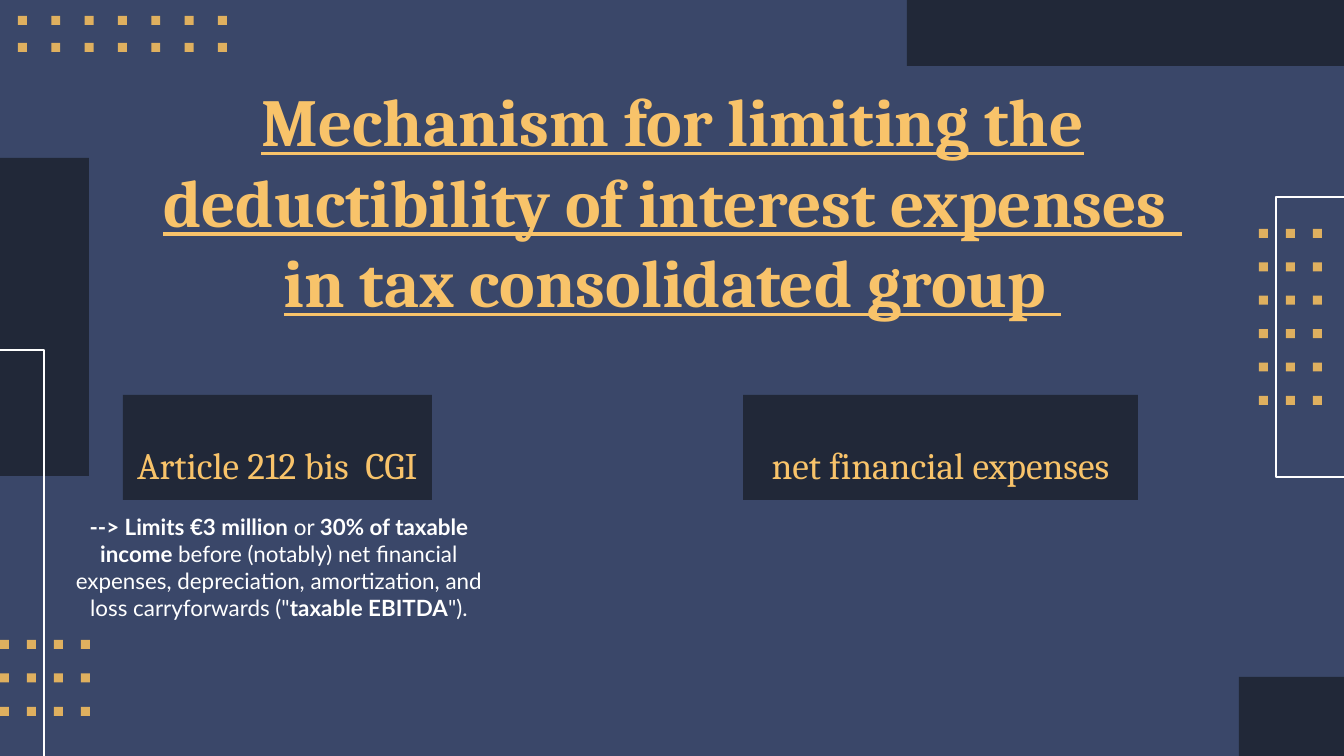
from copy import deepcopy
from dataclasses import dataclass

from pptx import Presentation
from pptx.dml.color import RGBColor
from pptx.enum.shapes import MSO_SHAPE
from pptx.enum.text import MSO_ANCHOR, MSO_AUTO_SIZE, PP_ALIGN
from pptx.oxml.ns import qn
from pptx.util import Inches, Pt

RECTANGLE = MSO_SHAPE.RECTANGLE
TOP, BOTTOM = MSO_ANCHOR.TOP, MSO_ANCHOR.BOTTOM
CENTER = PP_ALIGN.CENTER
NO_AUTOFIT = MSO_AUTO_SIZE.NONE

SLIDE_WIDTH, SLIDE_HEIGHT = 1344, 756
SCALE = Inches(10) / SLIDE_WIDTH
TITLE_ONLY = 5
DOT = 9


@dataclass(frozen=True)
class Theme:
    background: RGBColor = RGBColor(0x3A, 0x47, 0x69)
    panel: RGBColor = RGBColor(0x21, 0x28, 0x38)
    accent: RGBColor = RGBColor(0xF8, 0xC3, 0x6A)
    dot: RGBColor = RGBColor(0xDF, 0xB0, 0x5F)
    white: RGBColor = RGBColor(0xFF, 0xFF, 0xFF)
    heading_font: str = "Cambria"
    body_font: str = "Lato"
    title_size: int = 36
    card_size: int = 20
    body_size: int = 12


THEME = Theme()
TITLE_FORMAT = dict(name=THEME.heading_font, size=Pt(THEME.title_size), bold=True, underline=True)
CARD_FORMAT = dict(name=THEME.heading_font, size=Pt(THEME.card_size))
BODY_FORMAT = dict(name=THEME.body_font, size=Pt(THEME.body_size))

TITLE_LINES = (
    "Mechanism for limiting the deductibility of interest expenses ",
    "in tax consolidated group ",
)
LIMIT_RULE = (
    ("--> Limits €3 million ", True),
    ("or ", False),
    ("30% of taxable income ", True),
    ("before (notably) net financial expenses, depreciation, amortization, "
     "and loss carryforwards (\"", False),
    ("taxable EBITDA", True),
    ("\").", False),
)


def px(length):
    return round(length * SCALE)


def emu_box(box):
    return [px(length) for length in box]


def set_values(target, values):
    for name, value in values.items():
        setattr(target, name, value)


def add_run(paragraph, text, color, values):
    run = paragraph.add_run()
    run.text = text
    set_values(run.font, values)
    run.font.color.rgb = color
    return run


def prepare_text(shape, anchor):
    """Set up the text frame and return its centred first paragraph."""
    frame = shape.text_frame
    margins = {f"margin_{side}": Inches(0.1) for side in ("left", "top", "right", "bottom")}
    set_values(frame, dict(word_wrap=True, auto_size=NO_AUTOFIT, vertical_anchor=anchor, **margins))
    paragraph = frame.paragraphs[0]
    paragraph.alignment = CENTER
    return paragraph


def add_block(shapes, box, color):
    block = shapes.add_shape(RECTANGLE, *emu_box(box))
    block.shadow.inherit = False
    block.fill.solid()
    block.fill.fore_color.rgb = color
    block.line.fill.background()
    return block


def add_dot_grid(shapes, box, columns, rows):
    """Spread square dots evenly so that the outer ones touch the box edges."""
    left, top, width, height = box
    column_step = (width - DOT) / (columns - 1)
    row_step = (height - DOT) / (rows - 1)
    grid = shapes.add_group_shape()
    for row in range(rows):
        for column in range(columns):
            dot_box = (left + column * column_step, top + row * row_step, DOT, DOT)
            add_block(grid.shapes, dot_box, THEME.dot)


def add_open_frame(shapes, box, corners):
    """Draw an open outline through corners given as fractions of the box."""
    left, top, width, height = box
    points = [(px(left + x * width), px(top + y * height)) for x, y in corners]
    builder = shapes.build_freeform(*points[0])
    builder.add_line_segments(points[1:], close=False)
    outline = builder.convert_to_shape()
    outline.shadow.inherit = False
    outline.fill.background()
    outline.line.color.rgb = THEME.white
    outline.line.width = Pt(0.75)


def add_decoration(shapes):
    for box in ((1239, 677, 105, 79), (907, -9, 437, 75), (0, 158, 89, 318)):
        add_block(shapes, box, THEME.panel)
    add_open_frame(shapes, (1276, 197, 85, 280), ((1, 0), (0, 0), (0, 1), (1, 1)))
    add_open_frame(shapes, (0, 350, 44, 406), ((1, 1), (1, 0), (0, 0)))
    add_dot_grid(shapes, (18, 16, 209, 36), columns=7, rows=2)
    add_dot_grid(shapes, (1259, 229, 63, 176), columns=3, rows=6)
    add_dot_grid(shapes, (0, 640, 90, 76), columns=4, rows=3)


def place_title(title, box):
    set_values(title, dict(zip(("left", "top", "width", "height"), emu_box(box))))
    paragraph = prepare_text(title, TOP)
    first_line, second_line = TITLE_LINES
    first_run = add_run(paragraph, first_line, THEME.accent, TITLE_FORMAT)
    paragraph.add_line_break()
    line_break = paragraph._p.find(qn("a:br"))
    line_break.append(deepcopy(first_run.font._element))
    add_run(paragraph, second_line, THEME.accent, TITLE_FORMAT)


def add_card(shapes, box, heading):
    card = add_block(shapes, box, THEME.panel)
    add_run(prepare_text(card, BOTTOM), heading, THEME.accent, CARD_FORMAT)


def add_limit_rule(shapes, box):
    paragraph = prepare_text(shapes.add_textbox(*emu_box(box)), TOP)
    for text, bold in LIMIT_RULE:
        add_run(paragraph, text, THEME.white, dict(BODY_FORMAT, bold=bold))


def main():
    presentation = Presentation()
    presentation.slide_width = px(SLIDE_WIDTH)
    presentation.slide_height = px(SLIDE_HEIGHT)
    slide = presentation.slides.add_slide(presentation.slide_layouts[TITLE_ONLY])
    slide.background.fill.solid()
    slide.background.fill.fore_color.rgb = THEME.background

    add_decoration(slide.shapes)
    add_card(slide.shapes, (123, 395, 309, 105), "Article 212 bis  CGI")
    add_card(slide.shapes, (743, 395, 395, 105), "net financial expenses")
    place_title(slide.shapes.title, (106, 66, 1133, 85))
    add_limit_rule(slide.shapes, (56, 500, 446, 141))
    presentation.save("out.pptx")


if __name__ == "__main__":
    main()
